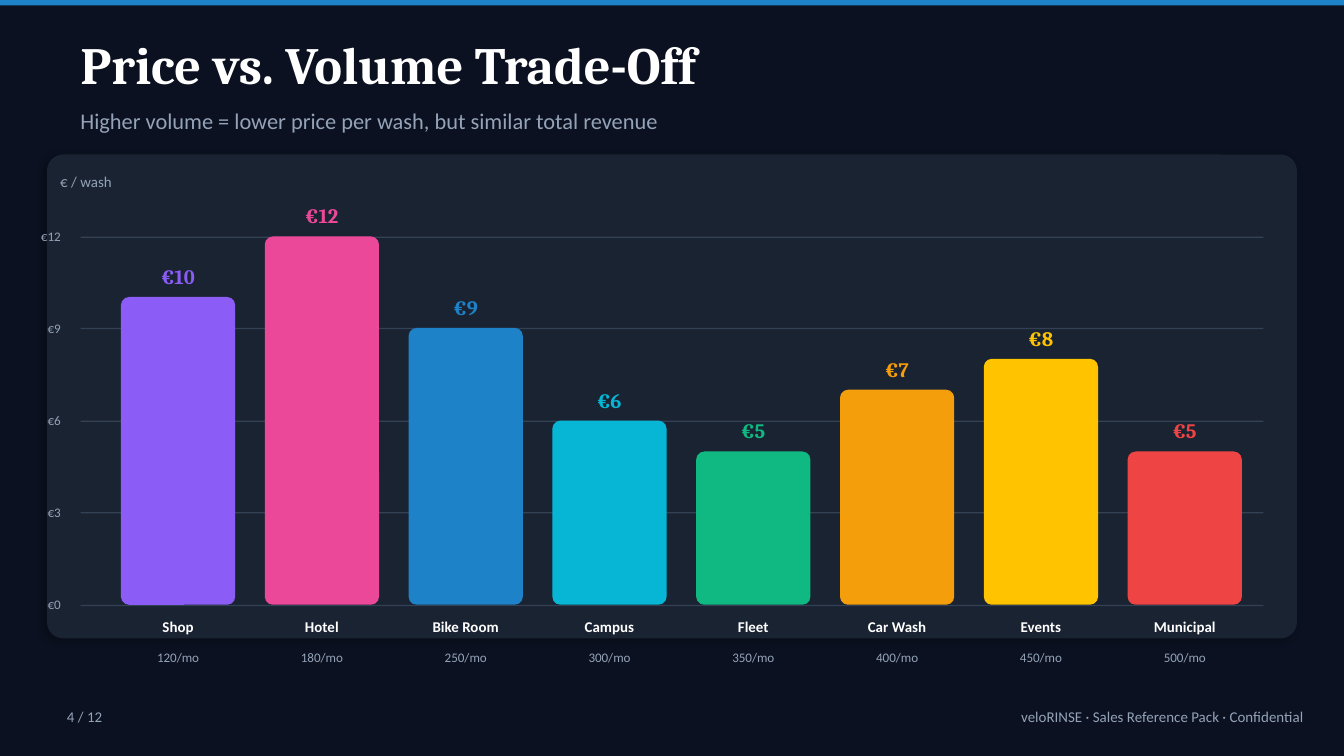
from lxml import etree
from pptx import Presentation
from pptx.dml.color import RGBColor
from pptx.enum.shapes import MSO_SHAPE
from pptx.enum.text import MSO_ANCHOR, PP_ALIGN
from pptx.oxml.ns import qn
from pptx.util import Pt

RECT, ROUNDED = MSO_SHAPE.RECTANGLE, MSO_SHAPE.ROUNDED_RECTANGLE
LEFT, CENTER, RIGHT = PP_ALIGN.LEFT, PP_ALIGN.CENTER, PP_ALIGN.RIGHT
MIDDLE = MSO_ANCHOR.MIDDLE

EMU_PER_PX = 9144  # 100 px to the inch
SLIDE_WIDTH = 1000

NAVY, CARD, GRID = "0B1120", "1A2332", "334155"
BLUE, WHITE, MUTED = "1E82C8", "FFFFFF", "94A3B8"
BODY, HEADING = "Calibri", "Cambria"

BASELINE = 450
PX_PER_EURO = 320 / 14
BAR_LEFT, BAR_WIDTH, BAR_STEP = 90, 85, 107
TICKS = range(0, 13, 3)
SEGMENTS = [
    ("Shop", 10, 120, "8B5CF6"),
    ("Hotel", 12, 180, "EC4899"),
    ("Bike Room", 9, 250, BLUE),
    ("Campus", 6, 300, "06B6D4"),
    ("Fleet", 5, 350, "10B981"),
    ("Car Wash", 7, 400, "F59E0B"),
    ("Events", 8, 450, "FFC300"),
    ("Municipal", 5, 500, "EF4444"),
]


def px(length):
    return round(length * EMU_PER_PX)


def rgb(hex_color):
    return RGBColor.from_string(hex_color)


def price_top(euros):
    """Vertical position of a price on the chart scale."""
    return round(BASELINE - euros * PX_PER_EURO)


class SlideBuilder:
    def __init__(self, slide):
        self.slide = slide

    def background(self, color):
        fill = self.slide.background.fill
        fill.solid()
        fill.fore_color.rgb = rgb(color)

    def block(self, left, top, width, height, color, radius=0):
        """Filled rectangle without outline, rounded when a radius is given."""
        shape = self.slide.shapes.add_shape(
            ROUNDED if radius else RECT, px(left), px(top), px(width), px(height))
        if radius:
            shape.adjustments[0] = radius / min(width, height)
        shape.shadow.inherit = False
        shape.fill.solid()
        shape.fill.fore_color.rgb = rgb(color)
        shape.line.fill.background()
        return shape

    def drop_shadow(self, shape):
        effects = shape._element.spPr.find(qn("a:effectLst"))
        shadow = etree.SubElement(
            effects, qn("a:outerShdw"), blurRad=str(Pt(4)), dist=str(Pt(2)),
            dir=str(135 * 60000), algn="bl", rotWithShape="0")
        color = etree.SubElement(shadow, qn("a:srgbClr"), val="000000")
        etree.SubElement(color, qn("a:alpha"), val="25000")

    def text(self, left, top, width, height, words, size, color=MUTED,
             font=BODY, bold=False, align=LEFT):
        box = self.slide.shapes.add_textbox(px(left), px(top), px(width), px(height))
        frame = box.text_frame
        frame.word_wrap = True
        frame.vertical_anchor = MIDDLE
        paragraph = frame.paragraphs[0]
        paragraph.alignment = align
        run = paragraph.add_run()
        run.text = words
        run.font.size = Pt(size)
        run.font.name = font
        run.font.bold = bold
        run.font.color.rgb = rgb(color)

    def gridline(self, euros):
        top = price_top(euros)
        self.block(60, top, 880, 1, GRID)
        self.text(15, top - 12, 40, 24, f"€{euros}", 7, align=RIGHT)

    def bar(self, left, segment, price, washes, color):
        """Price bar with its value above and its labels below."""
        top = price_top(price)
        self.block(left, top, BAR_WIDTH, BASELINE - top, color, radius=6)
        self.text(left, top - 28, BAR_WIDTH, 25, f"€{price}", 11, color,
                  HEADING, bold=True, align=CENTER)
        self.text(left - 10, 478, BAR_WIDTH + 20, 22, f"{washes}/mo", 7, align=CENTER)
        self.text(left - 15, 455, BAR_WIDTH + 30, 22, segment, 8, WHITE,
                  bold=True, align=CENTER)


def main():
    deck = Presentation()
    deck.slide_width = px(SLIDE_WIDTH)
    deck.slide_height = deck.slide_width * 9 // 16
    builder = SlideBuilder(deck.slides.add_slide(deck.slide_layouts[6]))

    builder.background(NAVY)
    builder.block(0, 0, SLIDE_WIDTH, 4, BLUE)
    builder.text(40, 518, 120, 30, "4 / 12", 8)
    builder.text(500, 518, 480, 30,
                 "veloRINSE · Sales Reference Pack · Confidential", 8, align=RIGHT)
    builder.text(50, 20, 900, 55, "Price vs. Volume Trade-Off", 28, WHITE,
                 HEADING, bold=True)
    builder.text(50, 75, 900, 30,
                 "Higher volume = lower price per wash, but similar total revenue", 12)

    chart_card = builder.block(35, 115, 930, 360, CARD, radius=12)
    builder.drop_shadow(chart_card)
    builder.text(35, 120, 100, 30, "€ / wash", 8)
    for euros in TICKS:
        builder.gridline(euros)
    for index, segment in enumerate(SEGMENTS):
        builder.bar(BAR_LEFT + index * BAR_STEP, *segment)

    deck.save("out.pptx")


if __name__ == "__main__":
    main()
